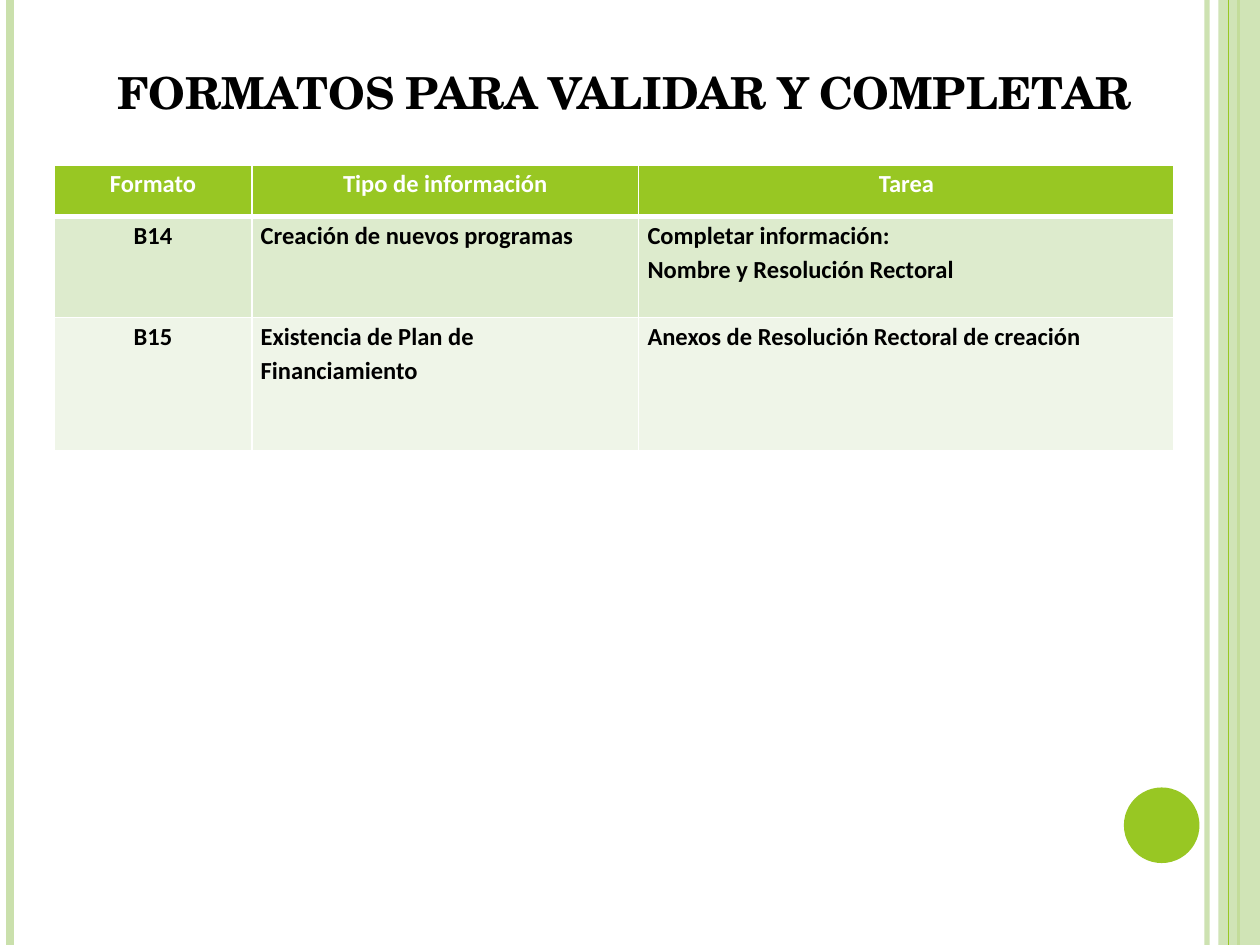
import pptx
import pptx.util
import pptx.dml.color
import pptx.enum.shapes
import pptx.enum.text
import pptx.oxml
import pptx.oxml.ns

W, H = 10, 7.5
COLORS = {
    "green": "98C723", "pale": "CAE0AC", "white": "FFFFFF", "black": "000000",
    "odd_row": "DDEBCD", "even_row": "EFF5E8",
}
ALIGN = pptx.enum.text.PP_ALIGN
COLUMN_ALIGN = [ALIGN.CENTER, ALIGN.LEFT, ALIGN.JUSTIFY]
COL_WIDTHS = [1.57, 3.07, 4.25]
ROW_HEIGHTS = [0.41, 0.8, 1.06]
ROWS = [
    ["Formato", "Tipo de información", "Tarea"],
    ["B14", "Creación de nuevos programas",
     "Completar información:\nNombre y Resolución Rectoral"],
    ["B15", "Existencia de Plan de Financiamiento",
     "Anexos de Resolución Rectoral de creación"],
]
# x as a share of the slide width, colour, width in points, opacity in percent
STRIPES_BELOW = [(0.958, "pale", 3, 93), (0.008, "pale", 4.5, 100),
                 (0.983, "green", 1.5, 100)]
STRIPE_ABOVE = (0.975, "green", 0.75, 100)


def inches(*values):
    return [pptx.util.Inches(v) for v in values]


def rgb(name):
    return pptx.dml.color.RGBColor.from_string(COLORS[name])


def set_format(obj, values):
    for name, value in values.items():
        setattr(obj, name, value)


def set_opacity(sp, percent):
    """Apply opacity to the first solid colour of a shape or line."""
    color = sp._element.spPr.find(".//" + pptx.oxml.ns.qn("a:srgbClr"))
    alpha = color.makeelement(pptx.oxml.ns.qn("a:alpha"), {"val": str(percent * 1000)})
    color.append(alpha)


def add_stripe(s, share, color, width, opacity):
    x = share * W
    line = s.shapes.add_connector(
        pptx.enum.shapes.MSO_CONNECTOR.STRAIGHT, *inches(x, 0, x, H))
    line.line.color.rgb = rgb(color)
    line.line.width = pptx.util.Pt(width)
    if opacity < 100:
        set_opacity(line, opacity)
    sp_pr = line._element.spPr
    sp_pr.append(sp_pr.makeelement(pptx.oxml.ns.qn("a:effectLst"), {}))


def add_filled(s, kind, box, color):
    sp = s.shapes.add_shape(kind, *inches(*box))
    sp.shadow.inherit = False
    sp.fill.solid()
    sp.fill.fore_color.rgb = rgb(color)
    sp.line.fill.background()
    return sp


def write(p, text, font, size, color, align):
    p.alignment = align
    r = p.add_run()
    r.text = text
    set_format(r.font, {"name": font, "size": pptx.util.Pt(size), "bold": True})
    r.font.color.rgb = rgb(color)
    return r


def add_title(s, text):
    tf = s.shapes.add_textbox(*inches(0.5, 0.3, 8.91, 0.69)).text_frame
    set_format(tf, {"word_wrap": True,
                    "vertical_anchor": pptx.enum.text.MSO_ANCHOR.BOTTOM})
    r = write(tf.paragraphs[0], text, "TeX Gyre Schola", 25.2, "black", ALIGN.CENTER)
    r.font._element.set("cap", "small")


def set_borders(cell, widths):
    """Draw white borders; widths maps side tags to points."""
    tc_pr = cell._tc.get_or_add_tcPr()
    for i, (tag, width) in enumerate(widths.items()):
        tc_pr.insert(i, pptx.oxml.parse_xml(
            f'<a:{tag} {pptx.oxml.ns.nsdecls("a")} w="{pptx.util.Pt(width)}">'
            f'<a:solidFill><a:srgbClr val="{COLORS["white"]}"/></a:solidFill></a:{tag}>'))


def fill_cell(cell, text, align, text_color, fill):
    margin = pptx.util.Inches(0.07)
    set_format(cell, {"margin_left": margin, "margin_right": margin,
                      "margin_top": 0, "margin_bottom": 0})
    cell.fill.solid()
    cell.fill.fore_color.rgb = rgb(fill)
    tf = cell.text_frame
    for i, line in enumerate(text.split("\n")):
        p = tf.add_paragraph() if i else tf.paragraphs[0]
        p.line_spacing = 1.15
        write(p, line, "Calibri", 14, text_color, align)


def add_format_table(s):
    table = s.shapes.add_table(
        len(ROWS), len(COL_WIDTHS),
        *inches(0.43, 1.31, sum(COL_WIDTHS), sum(ROW_HEIGHTS))).table
    for column, width in zip(table.columns, COL_WIDTHS):
        column.width = pptx.util.Inches(width)
    for row, height in zip(table.rows, ROW_HEIGHTS):
        row.height = pptx.util.Inches(height)
    fills = ["green", "odd_row", "even_row"]
    for i, texts in enumerate(ROWS):
        for j, text in enumerate(texts):
            cell = table.cell(i, j)
            align = COLUMN_ALIGN[j] if i else ALIGN.CENTER
            fill_cell(cell, text, align, "black" if i else "white", fills[i])
            set_borders(cell, {"lnL": 1, "lnR": 1, "lnT": 3 if i == 1 else 1,
                               "lnB": 1 if i else 3})


def main():
    prs = pptx.Presentation()
    prs.slide_width, prs.slide_height = inches(W, H)
    s = prs.slides.add_slide(prs.slide_layouts[6])
    shapes = pptx.enum.shapes.MSO_SHAPE
    for stripe in STRIPES_BELOW:
        add_stripe(s, *stripe)
    band = add_filled(s, shapes.RECTANGLE, (9.67, 0, 0.33, H), "pale")
    set_opacity(band, 87)
    add_stripe(s, *STRIPE_ABOVE)
    add_filled(s, shapes.OVAL, (8.92, 6.25, 0.6, 0.6), "green")
    add_title(s, "FORMATOS PARA VALIDAR Y COMPLETAR")
    add_format_table(s)
    prs.save("out.pptx")


if __name__ == "__main__":
    main()
